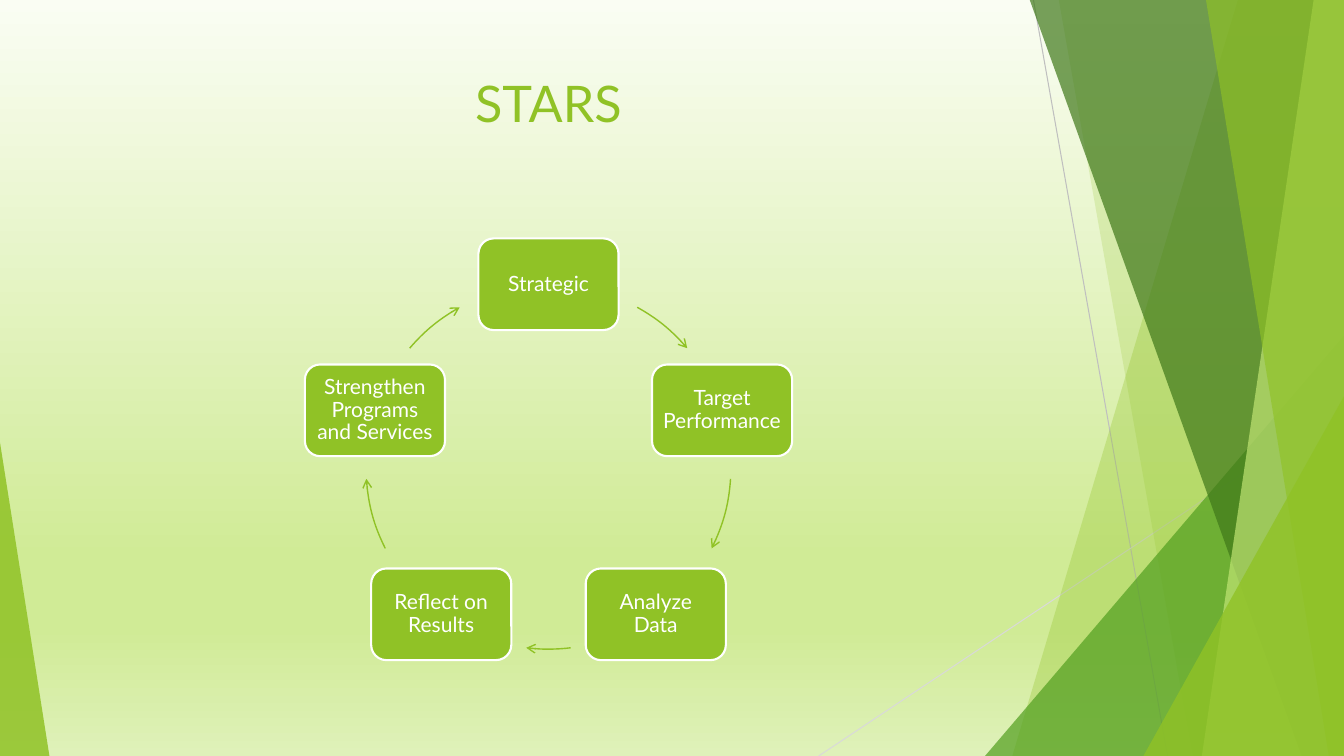
import math
from copy import deepcopy

from lxml import etree
from pptx import Presentation
from pptx.dml.color import RGBColor
from pptx.enum.shapes import MSO_CONNECTOR, MSO_SHAPE
from pptx.enum.text import MSO_ANCHOR, PP_ALIGN
from pptx.oxml.ns import qn
from pptx.util import Inches, Pt

STRAIGHT = MSO_CONNECTOR.STRAIGHT
ARC = MSO_SHAPE.ARC
ROUNDED = MSO_SHAPE.ROUNDED_RECTANGLE
TRIANGLE = MSO_SHAPE.ISOSCELES_TRIANGLE
CENTER = PP_ALIGN.CENTER
TOP = MSO_ANCHOR.TOP
MIDDLE = MSO_ANCHOR.MIDDLE

LIME = RGBColor(0x90, 0xC2, 0x26)
PALE_LIME = RGBColor(0xC0, 0xE4, 0x74)
GREEN = RGBColor(0x54, 0xA0, 0x21)
DARK_GREEN = RGBColor(0x3F, 0x78, 0x19)
GRAY = RGBColor(0xBF, 0xBF, 0xBF)
LIGHT_GRAY = RGBColor(0xD9, 0xD9, 0xD9)
WHITE = RGBColor(0xFF, 0xFF, 0xFF)
SKY_TOP = RGBColor(0xFA, 0xFD, 0xF3)
SKY_MIDDLE = RGBColor(0xD0, 0xEB, 0x96)
SKY_BOTTOM = RGBColor(0xDF, 0xF1, 0xB9)

FONT = "Lato"
WIDTH, HEIGHT = 13.33, 7.5
EDGE_TOP = -0.01
CYCLE_X, CYCLE_Y, CYCLE_RADIUS = 5.44, 4.63, 1.81
STEP_WIDTH, STEP_HEIGHT = 1.39, 0.91
STEPS = [
    "Strategic",
    "Target Performance",
    "Analyze Data",
    "Reflect on Results",
    "Strengthen Programs and Services",
]
ARROW_ANGLES = [(299.1, 319.5), (3.8, 26.6), (83, 97), (153.4, 176.2), (220.5, 240.9)]


def set_background(slide, stops):
    fill = slide.background.fill
    fill.gradient()
    fill.gradient_angle = 270
    stop_list = slide._element.find(".//" + qn("a:gsLst"))
    while len(stop_list) < len(stops):
        stop_list.append(deepcopy(stop_list[0]))
    for gradient_stop, (position, color) in zip(fill.gradient_stops, stops):
        gradient_stop.position = position
        gradient_stop.color.rgb = color


def set_fill(shape, color, opacity=100):
    shape.shadow.inherit = False
    shape.fill.solid()
    shape.fill.fore_color.rgb = color
    shape.line.fill.background()
    if opacity < 100:
        color_element = shape._element.spPr.find(qn("a:solidFill"))[0]
        etree.SubElement(color_element, qn("a:alpha"), val=str(opacity * 1000))


def set_text(shape, text, size, color, anchor=MIDDLE, inset=0.06, line_spacing=1.0):
    frame = shape.text_frame
    frame.word_wrap = True
    frame.vertical_anchor = anchor
    frame.margin_left = frame.margin_right = Inches(inset)
    frame.margin_top = frame.margin_bottom = Inches(inset)
    paragraph = frame.paragraphs[0]
    paragraph.text = text
    paragraph.alignment = CENTER
    paragraph.line_spacing = line_spacing
    paragraph.font.name = FONT
    paragraph.font.size = Pt(size)
    paragraph.font.color.rgb = color


def add_preset(slide, kind, left, top, width, height):
    return slide.shapes.add_shape(
        kind, Inches(left), Inches(top), Inches(width), Inches(height))


def add_line(slide, start, end, color):
    line = slide.shapes.add_connector(
        STRAIGHT, *[Inches(value) for value in (*start, *end)])
    line.line.color.rgb = color
    line.line.width = Pt(0.75)
    etree.SubElement(line._element.spPr, qn("a:effectLst"))


def add_band(slide, top_left, bottom_left, color, opacity):
    points = [
        (Inches(x), Inches(y))
        for x, y in [(top_left, EDGE_TOP), (WIDTH, EDGE_TOP),
                     (WIDTH, HEIGHT), (bottom_left, HEIGHT)]
    ]
    builder = slide.shapes.build_freeform(*points[0])
    builder.add_line_segments(points[1:], close=True)
    set_fill(builder.convert_to_shape(), color, opacity)


def add_corner(slide, left, width, height, apex, color, opacity):
    triangle = add_preset(slide, TRIANGLE, left, HEIGHT - height, width, height)
    triangle.adjustments[0] = apex
    set_fill(triangle, color, opacity)


def add_step(slide, text, angle):
    center_x = CYCLE_X + CYCLE_RADIUS * math.cos(math.radians(angle))
    center_y = CYCLE_Y + CYCLE_RADIUS * math.sin(math.radians(angle))
    step = add_preset(slide, ROUNDED, center_x - STEP_WIDTH / 2,
                      center_y - STEP_HEIGHT / 2, STEP_WIDTH, STEP_HEIGHT)
    set_fill(step, LIME)
    step.line.color.rgb = WHITE
    step.line.width = Pt(1.5)
    set_text(step, text, 15, WHITE, line_spacing=0.9)


def add_cycle_arrow(slide, start_angle, end_angle):
    arrow = add_preset(slide, ARC, CYCLE_X - CYCLE_RADIUS, CYCLE_Y - CYCLE_RADIUS,
                       2 * CYCLE_RADIUS, 2 * CYCLE_RADIUS)
    arrow.shadow.inherit = False
    arrow.adjustments[0] = start_angle * 0.6
    arrow.adjustments[1] = end_angle * 0.6
    arrow.fill.background()
    arrow.line.color.rgb = LIME
    arrow.line.width = Pt(1)
    etree.SubElement(arrow.line._get_or_add_ln(), qn("a:tailEnd"), type="arrow")


def add_decoration(slide):
    add_line(slide, (10.25, 0), (11.58, HEIGHT), GRAY)
    add_line(slide, (WIDTH, 4.03), (8.12, HEIGHT), LIGHT_GRAY)
    add_band(slide, 12.28, 10.04, LIME, 30)
    add_band(slide, 10.5, 11.83, LIME, 20)
    add_corner(slide, 9.77, 3.56, 4.17, 1, GREEN, 72)
    add_band(slide, 10.21, 12.91, DARK_GREEN, 70)
    add_band(slide, 13.03, 11.92, PALE_LIME, 70)
    add_band(slide, 11.96, 13.18, LIME, 65)
    add_corner(slide, 11.34, 1.99, 3.57, 1, LIME, 80)
    add_corner(slide, 0, 0.49, 3.11, 0, LIME, 85)


def main():
    presentation = Presentation()
    presentation.slide_width = Inches(WIDTH)
    presentation.slide_height = Inches(HEIGHT)
    slide = presentation.slides.add_slide(presentation.slide_layouts[6])
    set_background(slide, [(0, SKY_TOP), (0.74, SKY_MIDDLE),
                           (0.83, SKY_MIDDLE), (1, SKY_BOTTOM)])
    add_decoration(slide)
    title = slide.shapes.add_textbox(Inches(0.74), Inches(0.67), Inches(9.4), Inches(1.44))
    set_text(title, "STARS", 36, LIME, anchor=TOP, inset=0.05)
    for index, (text, angles) in enumerate(zip(STEPS, ARROW_ANGLES)):
        add_step(slide, text, index * 360 / len(STEPS) - 90)
        add_cycle_arrow(slide, *angles)
    presentation.save("out.pptx")


if __name__ == "__main__":
    main()
